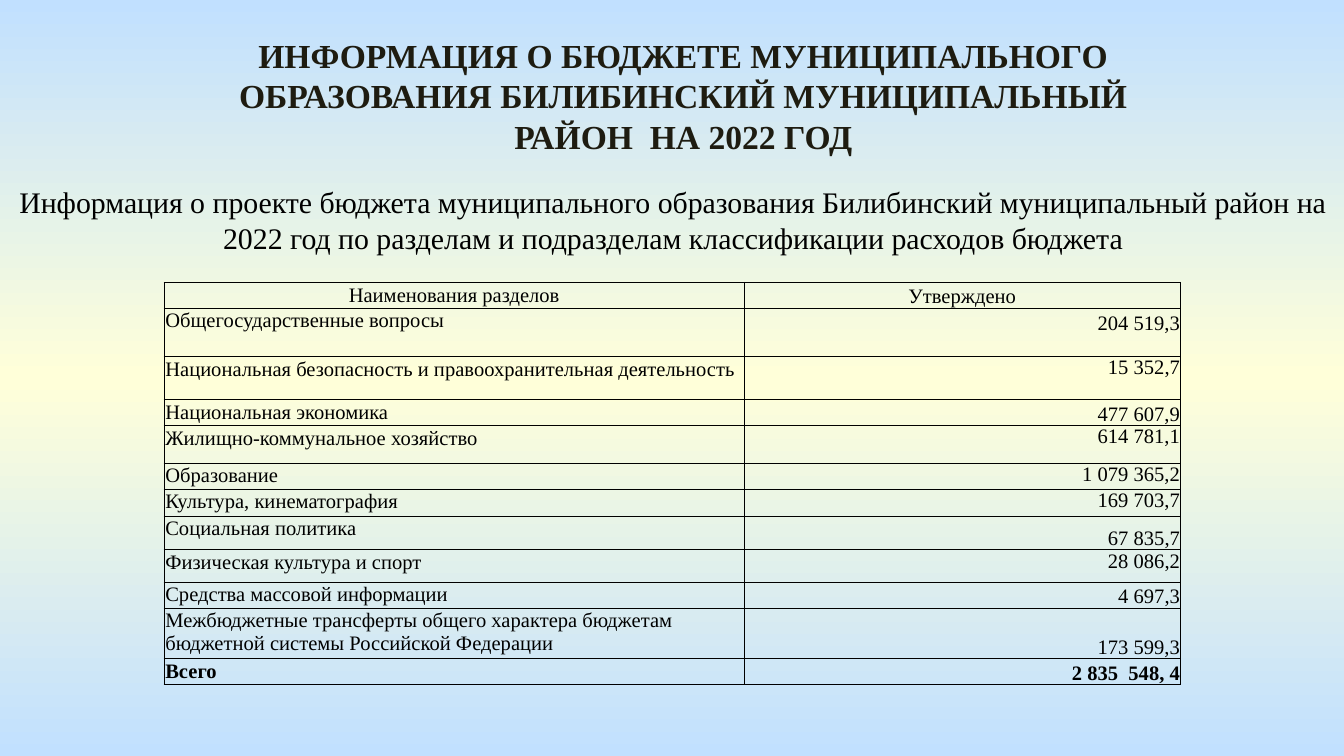
from copy import deepcopy
from dataclasses import dataclass

from lxml.etree import SubElement
from pptx import Presentation
from pptx.dml.color import RGBColor
from pptx.enum.text import MSO_ANCHOR, MSO_AUTO_SIZE, PP_ALIGN
from pptx.oxml.ns import qn
from pptx.util import Inches, Pt


@dataclass(frozen=True)
class Theme:
    font: str = "Times New Roman"
    title_color: str = "1E1C11"
    text_color: str = "000000"
    border_color: str = "000000"
    sky: str = "C1E0FF"
    cream: str = "FFFFD9"
    title_size: float = 18
    subtitle_size: float = 16
    table_size: float = 11
    border_width: float = 0.5


@dataclass(frozen=True)
class Heading:
    text: str
    box: tuple[float, float, float, float]
    size: float
    color: str
    bold: bool = False


@dataclass(frozen=True)
class BudgetRow:
    section: str
    amount: str
    height: float
    amount_anchor: MSO_ANCHOR = MSO_ANCHOR.BOTTOM
    amount_bottom: float = 0
    bold: bool = False


THEME = Theme()
TOP = MSO_ANCHOR.TOP
SLIDE_WIDTH = 10
SLIDE_HEIGHT = SLIDE_WIDTH * 9 / 16

HEADINGS = [
    Heading("ИНФОРМАЦИЯ О БЮДЖЕТЕ МУНИЦИПАЛЬНОГО ОБРАЗОВАНИЯ БИЛИБИНСКИЙ "
            "МУНИЦИПАЛЬНЫЙ РАЙОН  НА 2022 ГОД",
            (1.22, 0.21, 7.73, 1.01), THEME.title_size, THEME.title_color, True),
    Heading("Информация о проекте бюджета муниципального образования Билибинский "
            "муниципальный район на 2022 год по разделам и подразделам "
            "классификации расходов бюджета",
            (0.01, 1.32, 10, 0.64), THEME.subtitle_size, THEME.text_color),
]

COLUMN_NAMES = ("Наименования разделов", "Утверждено")
COLUMN_WIDTHS = (4.32, 3.24)
HEADER_HEIGHT = 0.19
BUDGET = [
    BudgetRow("Общегосударственные вопросы", "204 519,3", 0.36, amount_bottom=0.16),
    BudgetRow("Национальная безопасность и правоохранительная деятельность",
              "15 352,7", 0.32, TOP),
    BudgetRow("Национальная экономика", "477 607,9", 0.19),
    BudgetRow("Жилищно-коммунальное хозяйство", "614 781,1", 0.28, TOP),
    BudgetRow("Образование", "1 079 365,2", 0.19, TOP),
    BudgetRow("Культура, кинематография", "169 703,7", 0.2, TOP),
    BudgetRow("Социальная политика", "67 835,7", 0.25),
    BudgetRow("Физическая культура и спорт", "28 086,2", 0.24, TOP),
    BudgetRow("Средства массовой информации", "4 697,3", 0.19),
    BudgetRow("Межбюджетные трансферты общего характера бюджетам бюджетной системы "
              "Российской Федерации", "173 599,3", 0.36),
    BudgetRow("Всего", "2 835  548, 4", 0.19, bold=True),
]


def write(frame, text: str, size: float, color: str, align: PP_ALIGN,
          bold: bool = False) -> None:
    paragraph = frame.paragraphs[0]
    paragraph.alignment = align
    run = paragraph.add_run()
    run.text = text
    font_format = {"name": THEME.font, "size": Pt(size), "bold": bold}
    for attribute, value in font_format.items():
        setattr(run.font, attribute, value)
    run.font.color.rgb = RGBColor.from_string(color)


def paint_background(slide) -> None:
    """Fill with a vertical gradient: sky, cream in the middle, sky."""
    fill = slide.background.fill
    fill.gradient()
    fill.gradient_angle = 90
    stops = next(slide.element.iter(qn("a:gsLst")))
    stops.insert(1, deepcopy(stops[0]))
    colors = (THEME.sky, THEME.cream, THEME.sky)
    for index, (stop, color) in enumerate(zip(fill.gradient_stops, colors)):
        stop.position = index / 2
        stop.color.rgb = RGBColor.from_string(color)


def add_heading(slide, heading: Heading) -> None:
    frame = slide.shapes.add_textbox(*map(Inches, heading.box)).text_frame
    frame.word_wrap = True
    frame.auto_size = MSO_AUTO_SIZE.SHAPE_TO_FIT_TEXT
    write(frame, heading.text, heading.size, heading.color, PP_ALIGN.CENTER, heading.bold)


def add_borders(cell) -> None:
    properties = cell._tc.get_or_add_tcPr()
    for position, side in enumerate(("lnL", "lnR", "lnT", "lnB")):
        line = SubElement(properties, qn(f"a:{side}"), w=str(Pt(THEME.border_width)))
        solid = SubElement(line, qn("a:solidFill"))
        SubElement(solid, qn("a:srgbClr"), val=THEME.border_color)
        properties.insert(position, line)


def fill_cell(cell, text: str, align: PP_ALIGN, anchor: MSO_ANCHOR,
              inset: float = 0.01, bottom: float = 0, bold: bool = False) -> None:
    cell_format = {
        "margin_left": Inches(inset), "margin_right": Inches(inset),
        "margin_top": Inches(inset), "margin_bottom": Inches(bottom),
        "vertical_anchor": anchor,
    }
    for attribute, value in cell_format.items():
        setattr(cell, attribute, value)
    cell.fill.background()
    add_borders(cell)
    write(cell.text_frame, text, THEME.table_size, THEME.text_color, align, bold)


def add_budget_table(slide) -> None:
    heights = [HEADER_HEIGHT] + [row.height for row in BUDGET]
    table = slide.shapes.add_table(
        len(heights), len(COLUMN_WIDTHS), Inches(1.22), Inches(2.1),
        Inches(sum(COLUMN_WIDTHS)), Inches(sum(heights))).table
    table.first_row = table.horz_banding = False
    for column, width in zip(table.columns, COLUMN_WIDTHS):
        column.width = Inches(width)
    for table_row, height in zip(table.rows, heights):
        table_row.height = Inches(height)

    header_anchors = (MSO_ANCHOR.MIDDLE, MSO_ANCHOR.BOTTOM)
    for column, (name, anchor) in enumerate(zip(COLUMN_NAMES, header_anchors)):
        fill_cell(table.cell(0, column), name, PP_ALIGN.CENTER, anchor)
    for index, row in enumerate(BUDGET, start=1):
        fill_cell(table.cell(index, 0), row.section, PP_ALIGN.LEFT, TOP, bold=row.bold)
        fill_cell(table.cell(index, 1), row.amount, PP_ALIGN.RIGHT, row.amount_anchor,
                  inset=0, bottom=row.amount_bottom, bold=row.bold)


def main() -> None:
    presentation = Presentation()
    presentation.slide_width = Inches(SLIDE_WIDTH)
    presentation.slide_height = Inches(SLIDE_HEIGHT)
    slide = presentation.slides.add_slide(presentation.slide_layouts[6])
    paint_background(slide)
    for heading in HEADINGS:
        add_heading(slide, heading)
    add_budget_table(slide)
    presentation.save("out.pptx")


if __name__ == "__main__":
    main()
